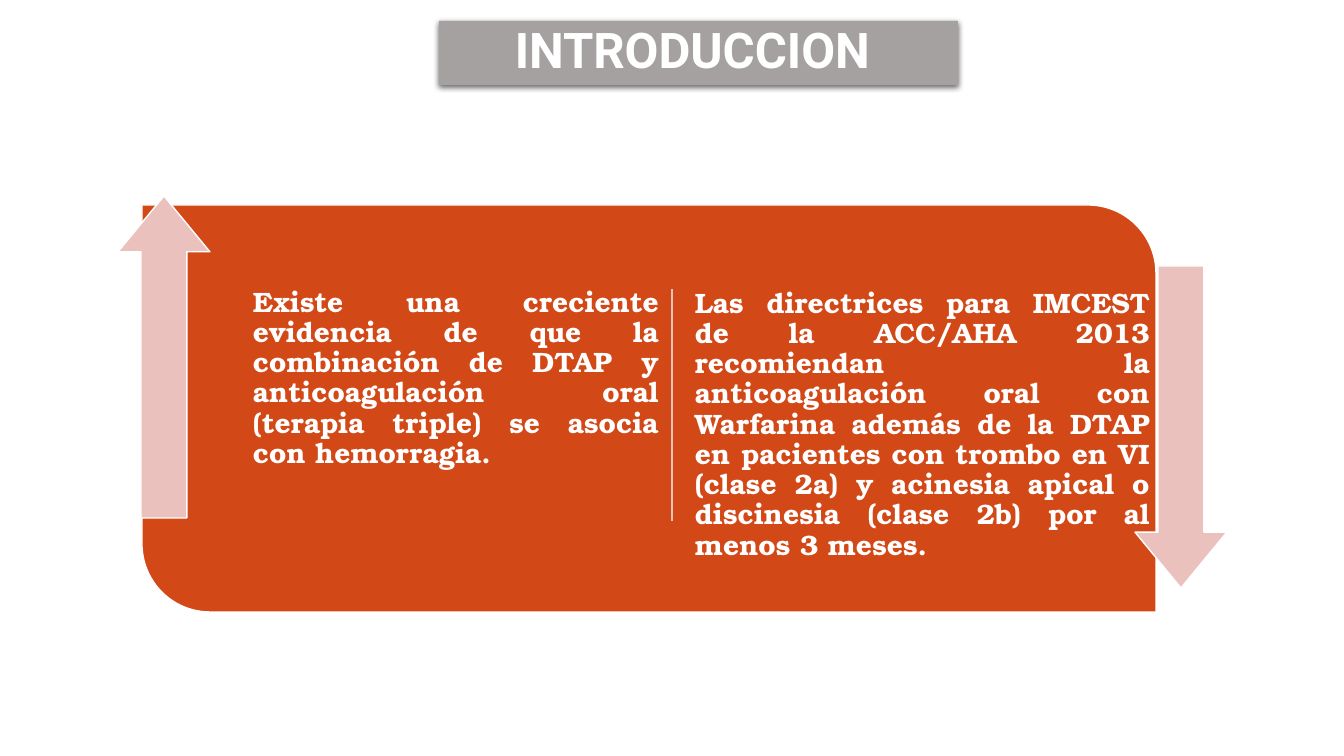
import pptx
import pptx.util
import pptx.dml.color
import pptx.enum.shapes
import pptx.enum.text
import pptx.oxml
import pptx.oxml.ns

SHAPE = pptx.enum.shapes.MSO_SHAPE
ALIGN = pptx.enum.text.PP_ALIGN
ANCHOR = pptx.enum.text.MSO_ANCHOR
PX = 914400 / 100.8

COLORS = {"panel": "D34817", "arrow": "EAC1BD", "title": "A6A1A1", "white": "FFFFFF"}

TITLE = ("INTRODUCCION ", (439, 21, 519, 64))
COLUMNS = [  # text, box, inset
    ("Existe una creciente evidencia de que la combinación de DTAP y "
     "anticoagulación oral (terapia triple) se asocia con hemorragia.",
     (246, 281, 420, 250), 7),
    ("Las directrices para IMCEST de la ACC/AHA 2013 recomiendan la "
     "anticoagulación oral con Warfarina además de la DTAP en pacientes con "
     "trombo en VI (clase 2a) y acinesia apical o discinesia (clase 2b) por "
     "al menos 3 meses.",
     (687, 281, 471, 250), 8),
]
PANEL = (142, 205, 1014, 407)
DIVIDER = (672, 289, 672, 521)
ARROWS = [(SHAPE.UP_ARROW, (118, 196, 92, 322)),
          (SHAPE.DOWN_ARROW, (1135, 266, 92, 322))]

SHADOW = ('<a:effectLst xmlns:a="http://schemas.openxmlformats.org/drawingml/2006/main">'
          '<a:outerShdw blurRad="50800" dist="19050" dir="5400000" rotWithShape="0">'
          '<a:srgbClr val="000000"><a:alpha val="60000"/></a:srgbClr>'
          '</a:outerShdw></a:effectLst>')


def px(n):
    return pptx.util.Emu(round(n * PX))


def rgb(name):
    return pptx.dml.color.RGBColor.from_string(COLORS[name])


def fill(sp, color):
    sp.fill.solid()
    sp.fill.fore_color.rgb = rgb(color)


def add_outlined(slide, kind, box, color, adjustments):
    sp = slide.shapes.add_shape(kind, *map(px, box))
    for i, value in enumerate(adjustments):
        sp.adjustments[i] = value
    sp.shadow.inherit = False
    fill(sp, color)
    sp.line.color.rgb = rgb("white")
    sp.line.width = pptx.util.Pt(1)
    return sp


def set_text(sp, text, box, inset, font, size, align, anchor):
    """Place a placeholder and give it one unbulleted bold paragraph."""
    sp.left, sp.top, sp.width, sp.height = map(px, box)
    tf = sp.text_frame
    tf.word_wrap = True
    tf.auto_size = pptx.enum.text.MSO_AUTO_SIZE.NONE
    tf.vertical_anchor = anchor
    tf.margin_left = tf.margin_right = tf.margin_top = tf.margin_bottom = px(inset)
    p = tf.paragraphs[0]
    p.alignment = align
    p.line_spacing = 0.9
    p.space_before = pptx.util.Pt(0)
    pPr = p._p.get_or_add_pPr()
    pPr.set("marL", "0")
    pPr.set("indent", "0")
    pPr.append(pPr.makeelement(pptx.oxml.ns.qn("a:buNone"), {}))
    r = p.add_run()
    r.text = text
    r.font.name = font
    r.font.size = pptx.util.Pt(size)
    r.font.bold = True
    r.font.color.rgb = rgb("white")


def main():
    prs = pptx.Presentation()
    prs.slide_width, prs.slide_height = px(1344), px(756)
    slide = prs.slides.add_slide(prs.slide_layouts[3])
    title, *bodies = slide.placeholders

    panel = add_outlined(slide, SHAPE.ROUND_2_DIAG_RECTANGLE, PANEL, "panel", (0, 0.167))
    slide.shapes._spTree.insert(2, panel._element)  # behind the text

    for sp, (text, box, inset) in zip(bodies, COLUMNS):
        set_text(sp, text, box, inset, "TeX Gyre Bonum", 20, ALIGN.JUSTIFY, ANCHOR.TOP)

    divider = slide.shapes.add_connector(
        pptx.enum.shapes.MSO_CONNECTOR.STRAIGHT, *map(px, DIVIDER))
    divider.line.color.rgb = rgb("arrow")
    divider.line.width = pptx.util.Pt(1)
    spPr = divider._element.spPr
    spPr.append(spPr.makeelement(pptx.oxml.ns.qn("a:effectLst"), {}))

    for kind, box in ARROWS:
        add_outlined(slide, kind, box, "arrow", (0.498, 0.607))

    text, box = TITLE
    set_text(title, text, box, 5, "Roboto", 35.1, ALIGN.CENTER, ANCHOR.MIDDLE)
    fill(title, "title")
    title._element.spPr.append(pptx.oxml.parse_xml(SHADOW))

    prs.save("out.pptx")


if __name__ == "__main__":
    main()
